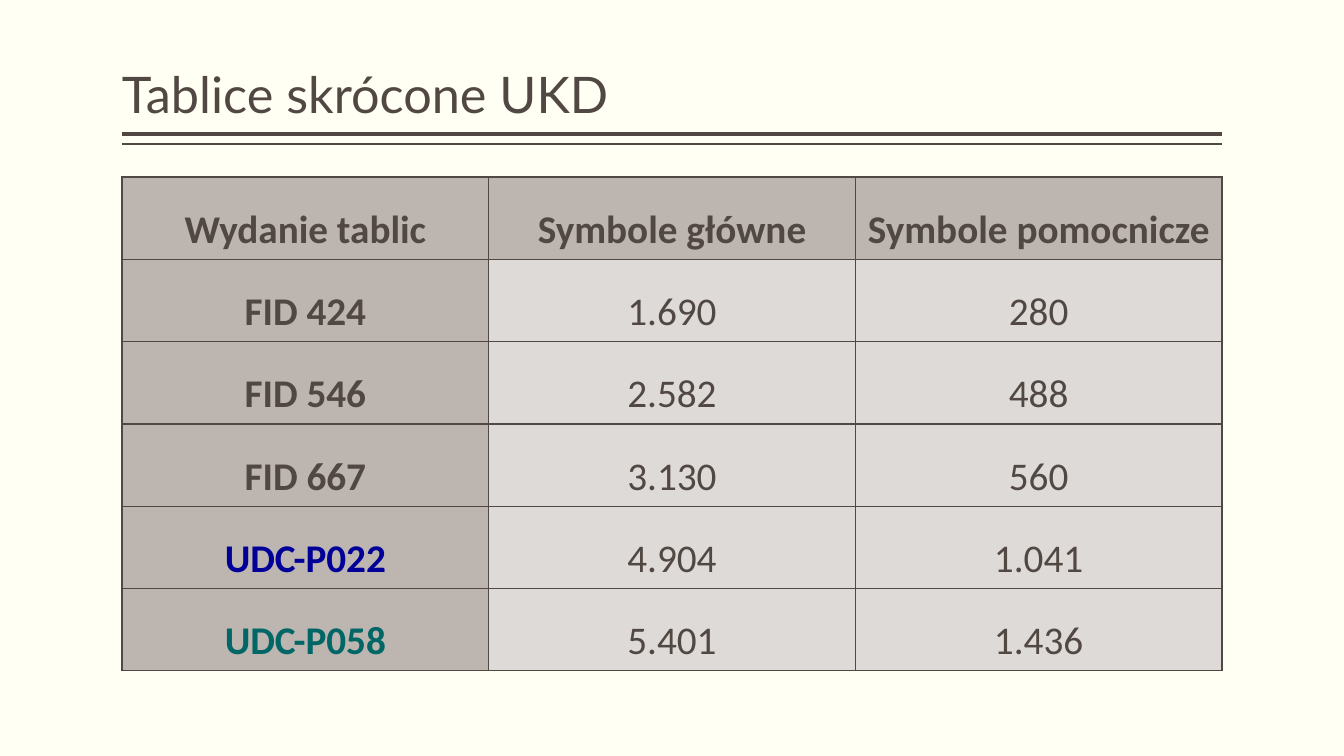
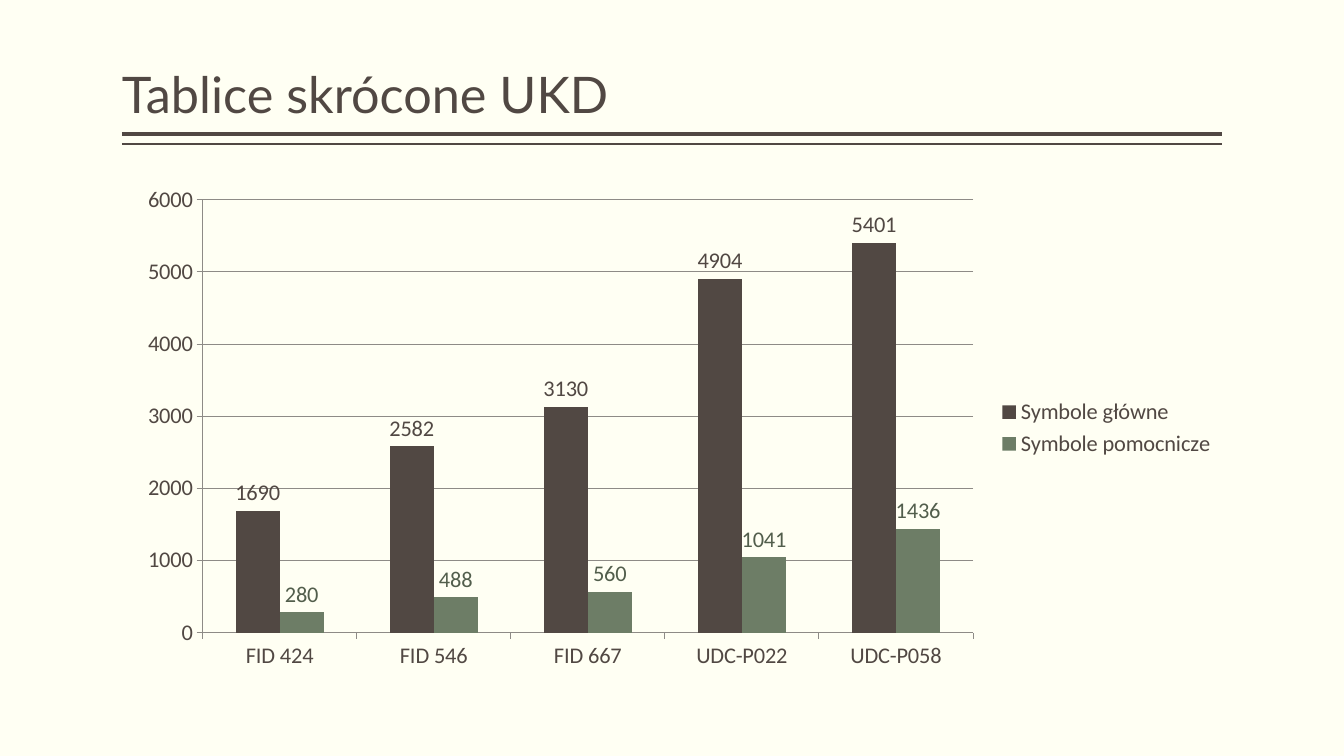
from lxml import etree
from pptx import Presentation, util as u
from pptx.chart.data import CategoryChartData
from pptx.dml.color import RGBColor
from pptx.enum import chart as ch, shapes, text
from pptx.oxml.ns import qn

SLIDE_W, SLIDE_H = 1344, 756
SCALE = u.Inches(13.3333) / SLIDE_W
COLORS = {
    "paper": "FFFFF3", "ink": "514843", "head": "BDB5B0", "cell": "DEDAD7",
    "green": "6D7D66", "green_text": "525E4C", "axis": "8E8B86",
    "blue": "000099", "teal": "006666",
}
TITLE = "Tablice skrócone UKD"
TITLE_BOX = (122, 8, 1100, 121)
TABLE_BOX = (122, 177, 1100, 494)
CHART_BOX = (126, 176, 1100, 504)
HEADINGS = ("Wydanie tablic", "Symbole główne", "Symbole pomocnicze")
EDITIONS = (
    ("FID 424", 1690, 280, "ink"),
    ("FID 546", 2582, 488, "ink"),
    ("FID 667", 3130, 560, "ink"),
    ("UDC-P022", 4904, 1041, "blue"),
    ("UDC-P058", 5401, 1436, "teal"),
)


def px(length):
    """Turn px into EMU."""
    return u.Emu(round(length * SCALE))


def rgb(name):
    """Look up a named colour."""
    return RGBColor.from_string(COLORS[name])


def style_font(font, size, color="ink", face="Calibri", bold=False):
    """Set face, size, weight and colour of a font."""
    font.name, font.size, font.bold = face, u.Pt(size), bold
    font.color.rgb = rgb(color)


def write(frame, words, align=text.PP_ALIGN.LEFT, spacing=1.0, **font):
    """Put one formatted paragraph into a text frame."""
    paragraph = frame.paragraphs[0]
    paragraph.alignment, paragraph.line_spacing = align, spacing
    run = paragraph.add_run()
    run.text = words
    style_font(run.font, **font)


def add_rule(slide, left, top, width, weight):
    """Draw one horizontal rule."""
    rule = slide.shapes.add_connector(
        shapes.MSO_CONNECTOR.STRAIGHT, px(left), px(top), px(left + width), px(top))
    rule.line.color.rgb, rule.line.width = rgb("ink"), u.Pt(weight)
    etree.SubElement(rule._element.spPr, qn("a:effectLst"))


def add_title(slide, box, words):
    """Place the title with its double rule below."""
    left, top, width, height = box
    add_rule(slide, left, top + height + 5, width, 3)
    add_rule(slide, left, top + height + 15, width, 1)
    frame = slide.shapes.add_textbox(*map(px, box)).text_frame
    frame.word_wrap = True
    frame.vertical_anchor = text.MSO_ANCHOR.BOTTOM
    frame.margin_left = frame.margin_right = 0
    write(frame, words, spacing=0.9, size=36, face="Lato")


def add_borders(cell):
    """Outline all four sides of a cell."""
    properties = cell._tc.get_or_add_tcPr()
    for side in "LRTB":
        border = etree.SubElement(properties, qn(f"a:ln{side}"), w=str(u.Pt(1)))
        fill = etree.SubElement(border, qn("a:solidFill"))
        etree.SubElement(fill, qn("a:srgbClr"), val=COLORS["ink"])


def fill_cell(cell, words, heading, color="ink"):
    """Write and colour one table cell."""
    add_borders(cell)
    cell.fill.solid()
    cell.fill.fore_color.rgb = rgb("head" if heading else "cell")
    write(cell.text_frame, words, align=text.PP_ALIGN.CENTER, spacing=1.5,
          size=28, color=color, bold=heading)


def add_symbol_table(slide, box):
    """Tabulate the symbol counts of each edition."""
    table = slide.shapes.add_table(
        len(EDITIONS) + 1, len(HEADINGS), *map(px, box)).table
    for column, heading in enumerate(HEADINGS):
        fill_cell(table.cell(0, column), heading, True)
    for row, (edition, *counts, color) in enumerate(EDITIONS, 1):
        fill_cell(table.cell(row, 0), edition, True, color)
        for column, count in enumerate(counts, 1):
            fill_cell(table.cell(row, column), f"{count:,}".replace(",", "."), False)


def style_series(series, fill, label_color):
    """Colour a series and label its columns."""
    series.format.fill.solid()
    series.format.fill.fore_color.rgb = rgb(fill)
    labels = series.data_labels
    labels.show_value = True
    labels.position = ch.XL_LABEL_POSITION.OUTSIDE_END
    style_font(labels.font, 16, label_color)


def add_symbol_chart(slide, box):
    """Chart the symbol counts of each edition."""
    editions, main, auxiliary, _ = zip(*EDITIONS)
    data = CategoryChartData()
    data.categories = editions
    for heading, counts in zip(HEADINGS[1:], (main, auxiliary)):
        data.add_series(heading, counts)
    chart = slide.shapes.add_chart(
        ch.XL_CHART_TYPE.COLUMN_CLUSTERED, *map(px, box), data).chart
    chart.has_title = False
    style_font(chart.font, 18, face="Roboto")
    chart.has_legend = True
    chart.legend.position = ch.XL_LEGEND_POSITION.RIGHT
    chart.legend.include_in_layout = False
    style_font(chart.legend.font, 16)
    for axis in (chart.category_axis, chart.value_axis):
        axis.major_tick_mark = ch.XL_TICK_MARK.OUTSIDE
        axis.format.line.color.rgb = rgb("axis")
        style_font(axis.tick_labels.font, 16)
    chart.value_axis.has_major_gridlines = True
    chart.value_axis.major_gridlines.format.line.color.rgb = rgb("axis")
    plot = chart.plots[0]
    plot.gap_width, plot.overlap, plot.vary_by_categories = 150, 0, False
    for series, fill, label in zip(plot.series, ("ink", "green"), ("ink", "green_text")):
        style_series(series, fill, label)


def main():
    """Build and save the presentation."""
    deck = Presentation()
    deck.slide_width, deck.slide_height = px(SLIDE_W), px(SLIDE_H)
    for add_content, box in ((add_symbol_table, TABLE_BOX), (add_symbol_chart, CHART_BOX)):
        slide = deck.slides.add_slide(deck.slide_layouts[6])
        slide.background.fill.solid()
        slide.background.fill.fore_color.rgb = rgb("paper")
        add_title(slide, TITLE_BOX, TITLE)
        add_content(slide, box)
    deck.save("out.pptx")


if __name__ == "__main__":
    main()
